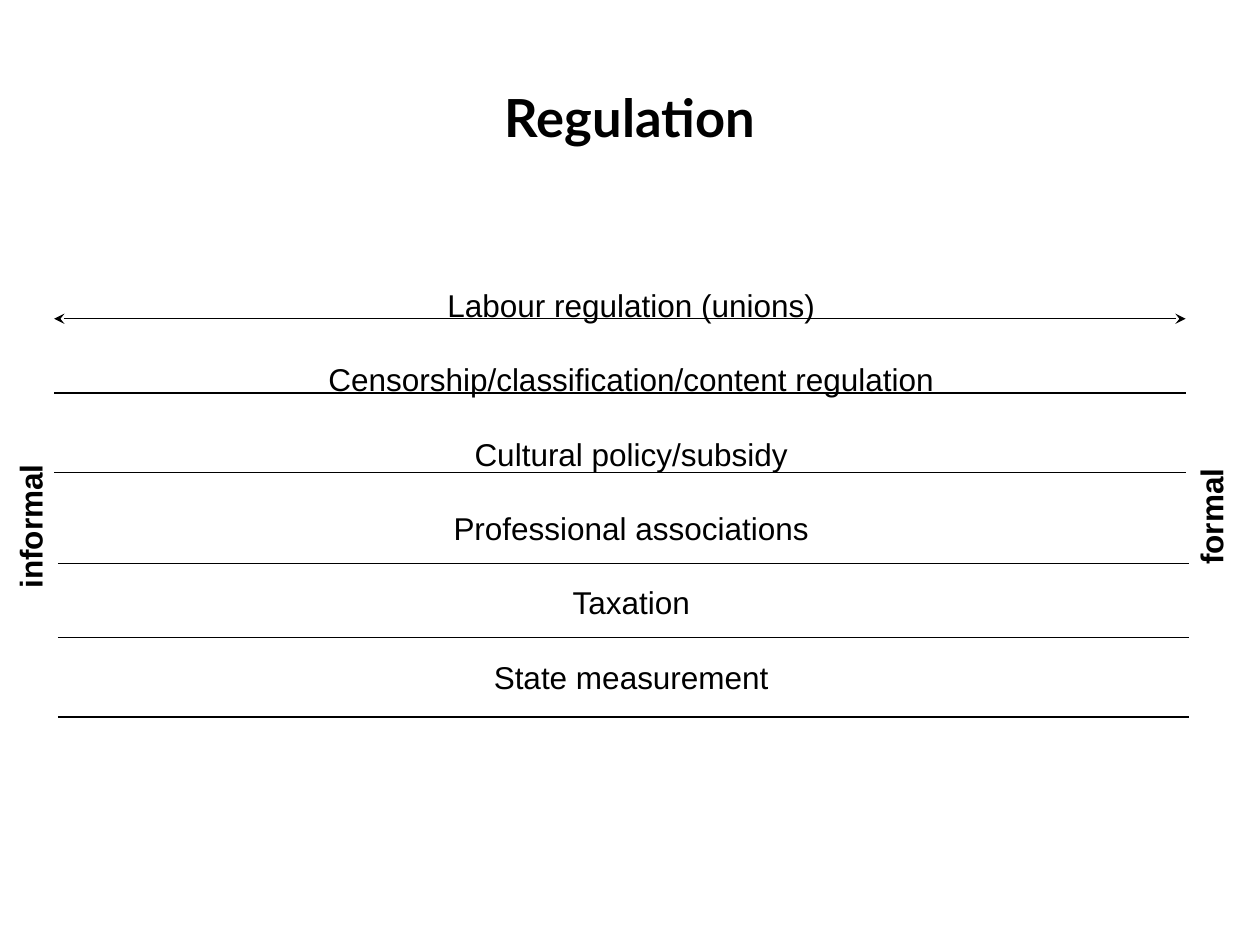
"""Build a slide placing forms of regulation on an informal-to-formal scale."""
from dataclasses import dataclass

from lxml.etree import SubElement
from pptx import Presentation
from pptx.dml.color import RGBColor
from pptx.enum.shapes import MSO_CONNECTOR
from pptx.enum.text import MSO_ANCHOR, PP_ALIGN
from pptx.oxml.ns import qn
from pptx.slide import Slide
from pptx.text.text import _Paragraph
from pptx.util import Inches, Pt

BLACK = RGBColor(0, 0, 0)
SCALE_WIDTH = 8.98


@dataclass
class Scale:
    topic: str
    left: float
    top: float
    arrows: bool = False


@dataclass
class Pole:
    label: str
    left: float
    width: float
    align: PP_ALIGN


SCALES = [
    Scale("Labour regulation (unions)", 0.43, 2.53, arrows=True),
    Scale("Censorship/classification/content regulation", 0.43, 3.12),
    Scale("Cultural policy/subsidy", 0.43, 3.75),
    Scale("Professional associations", 0.46, 4.47),
    Scale("Taxation", 0.46, 5.06),
    Scale("State measurement", 0.46, 5.69),
]
POLES = [
    Pole("informal", -0.43, 1.34, PP_ALIGN.LEFT),
    Pole("formal", 9.02, 1.18, PP_ALIGN.CENTER),
]


def format_paragraph(paragraph: _Paragraph, align: PP_ALIGN, size: int = 18,
                     font: str = "Arial", bold: bool = False) -> None:
    paragraph.alignment = align
    for run in paragraph.runs:
        run.font.name = font
        run.font.size = Pt(size)
        run.font.bold = bold
        run.font.color.rgb = BLACK


def add_title(slide: Slide, text: str) -> None:
    title = slide.shapes.title
    title.left, title.top = Inches(0.5), Inches(0.3)
    title.width, title.height = Inches(9), Inches(1.25)
    title.text_frame.text = text
    title.text_frame.vertical_anchor = MSO_ANCHOR.MIDDLE
    format_paragraph(title.text_frame.paragraphs[0], PP_ALIGN.CENTER, 30, "Lato", True)


def add_topics(slide: Slide, topics: list[str]) -> None:
    body = slide.shapes.add_textbox(Inches(0.51), Inches(1.62), Inches(9), Inches(4.95))
    frame = body.text_frame
    frame.word_wrap = True
    frame.margin_top = Inches(0.41)
    frame.text = "\n".join(topics)
    for paragraph in frame.paragraphs:
        format_paragraph(paragraph, PP_ALIGN.CENTER)
        paragraph.line_spacing = 1.8
        paragraph.space_before = Pt(3.6)


def add_pole(slide: Slide, pole: Pole) -> None:
    box = slide.shapes.add_textbox(
        Inches(pole.left), Inches(3.9), Inches(pole.width), Inches(0.4))
    box.rotation = 270
    box.text_frame.word_wrap = True
    box.text_frame.text = pole.label
    format_paragraph(box.text_frame.paragraphs[0], pole.align, bold=True)


def add_scale_line(slide: Slide, scale: Scale) -> None:
    line = slide.shapes.add_connector(
        MSO_CONNECTOR.STRAIGHT, Inches(scale.left), Inches(scale.top),
        Inches(scale.left + SCALE_WIDTH), Inches(scale.top))
    line.line.color.rgb = BLACK
    line.line.width = Pt(0.75)
    properties = line._element.spPr
    if scale.arrows:
        outline = properties.find(qn("a:ln"))
        for end in ("a:headEnd", "a:tailEnd"):
            SubElement(outline, qn(end), type="stealth")
    SubElement(properties, qn("a:effectLst"))


def main() -> None:
    presentation = Presentation()
    presentation.slide_width, presentation.slide_height = Inches(10), Inches(7.5)
    slide = presentation.slides.add_slide(presentation.slide_layouts[5])
    add_title(slide, "Regulation")
    add_topics(slide, [scale.topic for scale in SCALES])
    for pole in POLES:
        add_pole(slide, pole)
    for scale in SCALES:
        add_scale_line(slide, scale)
    presentation.save("out.pptx")


if __name__ == "__main__":
    main()
